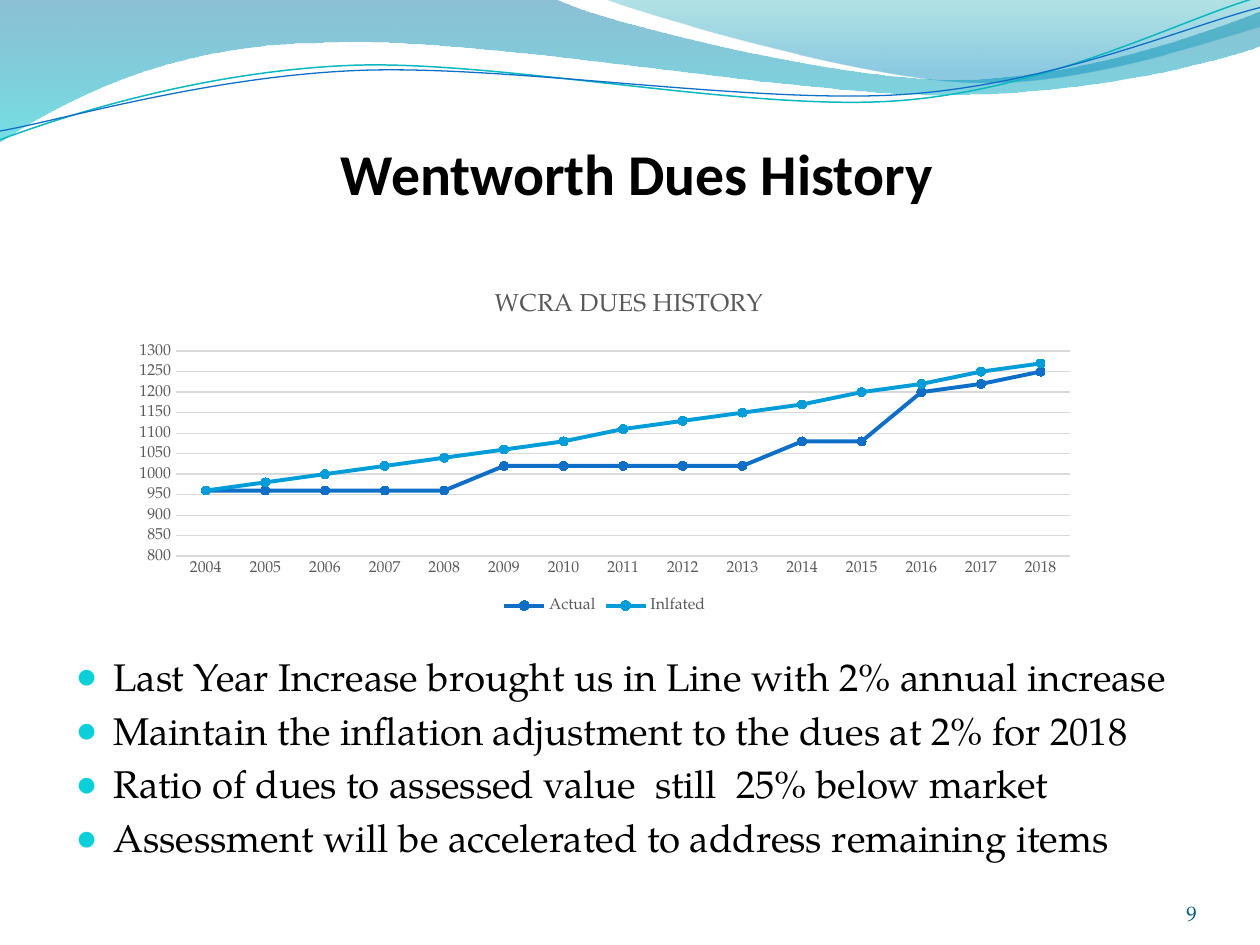
"""Build the Wentworth dues history slide with its line chart and bullets."""
import lxml.etree
import pptx
import pptx.chart.data
import pptx.dml.color
import pptx.enum.chart
import pptx.enum.text
import pptx.oxml
import pptx.oxml.ns
import pptx.util
from pptx.util import Inches, Pt

SERIF = "TeX Gyre Pagella"
GREY = "595959"
RULE = "D9D9D9"
qn = pptx.oxml.ns.qn


def rgb(code):
    return pptx.dml.color.RGBColor.from_string(code)


def add_curve(shapes, start, segments, closed):
    pts = [(Inches(seg[i]), Inches(seg[i + 1])) for seg in segments for i in range(0, len(seg), 2)]
    fb = shapes.build_freeform(Inches(start[0]), Inches(start[1]), scale=1.0)
    fb.add_line_segments(pts, close=closed)
    sp = fb.convert_to_shape()
    sp.shadow.inherit = False
    lines = iter(list(sp._element.spPr.iter(qn("a:lnTo"))))
    for seg in segments:
        first = next(lines)
        if len(seg) == 6:
            first.tag = qn("a:cubicBezTo")
            for line in (next(lines), next(lines)):
                first.append(line[0])
                line.getparent().remove(line)
    return sp


prs = pptx.Presentation()
prs.slide_width, prs.slide_height = Inches(10), Inches(7.5)
slide = prs.slides.add_slide(prs.slide_layouts[1])
shapes = slide.shapes

bands = [
    ((0, -0.01), [(4.4, -0.01), (4.76, 0.17, 6.64, 0.63, 7.58, 0.63),
                  (8.53, 0.63, 9.58, 0.26, 10, 0.09), (10.01, 0.36),
                  (9.83, 0.44, 8.7, 0.76, 7.46, 0.75), (6.22, 0.75, 3.82, 0.28, 2.57, 0.34),
                  (1.29, 0.35, 0.46, 0.83, -0.01, 1.13)],
     [(0, "0074A1", 45), (1, "00C6CF", 55)]),
    ((4.79, -0.01), [(5.09, 0.11, 6.82, 0.62, 7.69, 0.65), (8.56, 0.69, 9.61, 0.32, 10, 0.21),
                     (10, 0)],
     [(0, "00A1A9", 30), (0.8, "008BBF", 45)]),
]
for start, segments, stops in bands:
    sp = add_curve(shapes, start, segments, True)
    sp.line.fill.background()
    sp.fill.gradient()
    sp.fill.gradient_angle = 270
    for stop, (position, color, opacity) in zip(sp.fill.gradient_stops, stops):
        stop.position = position
        stop.color.rgb = rgb(color)
    for clr, (position, color, opacity) in zip(sp._element.spPr.iter(qn("a:srgbClr")), stops):
        lxml.etree.SubElement(clr, qn("a:alpha")).set("val", str(opacity * 1000))

waves = [
    ((0, 1.11), [(0.48, 0.93, 1.58, 0.57, 2.77, 0.52), (3.95, 0.47, 5.93, 0.89, 7.13, 0.8),
                 (8.33, 0.71, 9.38, 0.15, 9.98, -0.02)], "0AB8BF", 0.85),
    ((0, 1.04), [(0.47, 0.96, 1.64, 0.61, 2.83, 0.56), (4.03, 0.51, 5.97, 0.83, 7.17, 0.75),
                 (8.36, 0.67, 9.41, 0.21, 10, 0.06)], "0F6FC6", 0.75),
]
for start, segments, color, width in waves:
    sp = add_curve(shapes, start, segments, False)
    sp.fill.background()
    sp.line.color.rgb = rgb(color)
    sp.line.width = Pt(width)

title = shapes.title
title.left, title.top, title.width, title.height = map(Inches, (0.69, 0.94, 8.62, 0.95))
tf = title.text_frame
tf.auto_size = pptx.enum.text.MSO_AUTO_SIZE.NONE
tf.vertical_anchor = pptx.enum.text.MSO_ANCHOR.MIDDLE
tf.margin_left, tf.margin_right = Inches(0.18), Inches(0.07)
tf.margin_top, tf.margin_bottom = Inches(0.03), Inches(0.05)
p = tf.paragraphs[0]
p.alignment = pptx.enum.text.PP_ALIGN.CENTER
p.line_spacing = 0.9
r = p.add_run()
r.text = "Wentworth Dues History"
r.font.name, r.font.size, r.font.bold = "Calibri", Pt(33), True
r.font.color.rgb = rgb("000000")

body = slide.placeholders[1]
body.left, body.top, body.width, body.height = map(Inches, (0.5, 2.12, 9, 5.38))
tf = body.text_frame
tf.auto_size = pptx.enum.text.MSO_AUTO_SIZE.NONE
tf.margin_top = Inches(3.06)
bullets = [
    "Last Year Increase brought us in Line with 2% annual increase",
    "Maintain the inflation adjustment to the dues at 2% for 2018",
    "Ratio of dues to assessed value  still  25% below market",
    "Assessment will be accelerated to address remaining items",
]
for i, text in enumerate(bullets):
    p = tf.add_paragraph() if i else tf.paragraphs[0]
    pPr = p._p.get_or_add_pPr()
    pPr.set("marL", str(Inches(0.3)))
    pPr.set("indent", str(-Inches(0.3)))
    clr = lxml.etree.SubElement(pPr, qn("a:buClr"))
    lxml.etree.SubElement(clr, qn("a:srgbClr")).set("val", "0BD0D9")
    lxml.etree.SubElement(pPr, qn("a:buSzPct")).set("val", "95000")
    lxml.etree.SubElement(pPr, qn("a:buChar")).set("char", "●")
    p.space_before = Pt(4.4 if i else 0)
    r = p.add_run()
    r.text = text
    r.font.name, r.font.size = SERIF, Pt(22)
    r.font.color.rgb = rgb("000000")

data = pptx.chart.data.CategoryChartData()
data.categories = [str(year) for year in range(2004, 2019)]
data.add_series("Actual", [960] * 5 + [1020] * 5 + [1080] * 2 + [1200, 1220, 1250])
data.add_series("Inlfated", [960, 980, 1000, 1020, 1040, 1060, 1080, 1110, 1130, 1150,
                             1170, 1200, 1220, 1250, 1270])
chart = shapes.add_chart(pptx.enum.chart.XL_CHART_TYPE.LINE_MARKERS, Inches(0.95), Inches(2.25),
                         Inches(7.7), Inches(2.66), data).chart
chart.font.name, chart.font.size = SERIF, Pt(9)
chart.font.color.rgb = rgb(GREY)
chart.has_title = True
r = chart.chart_title.text_frame.paragraphs[0].add_run()
r.text = "WCRA DUES HISTORY"
r.font.name, r.font.size, r.font.bold = SERIF, Pt(14), False
r.font.color.rgb = rgb(GREY)
chart.has_legend = True
chart.legend.position = pptx.enum.chart.XL_LEGEND_POSITION.BOTTOM
chart.legend.include_in_layout = False

cat, val = chart.category_axis, chart.value_axis
for axis in (cat, val):
    axis.major_tick_mark = axis.minor_tick_mark = pptx.enum.chart.XL_TICK_MARK.NONE
    axis.tick_labels.font.name, axis.tick_labels.font.size = SERIF, Pt(9)
    axis.tick_labels.font.color.rgb = rgb(GREY)
cat.format.line.color.rgb = rgb(RULE)
cat.format.line.width = Pt(0.75)
val.format.line.fill.background()
val.minimum_scale, val.maximum_scale, val.major_unit = 800, 1300, 50
val.major_gridlines.format.line.color.rgb = rgb(RULE)
val.major_gridlines.format.line.width = Pt(0.75)

chart.plots[0].vary_by_categories = False
for series, color in zip(chart.plots[0].series, ("0F6FC6", "009DD9")):
    series.smooth = False
    series.format.line.color.rgb = rgb(color)
    series.format.line.width = Pt(2.25)
    series.marker.style = pptx.enum.chart.XL_MARKER_STYLE.CIRCLE
    series.marker.size = 5
    series.marker.format.fill.solid()
    series.marker.format.fill.fore_color.rgb = rgb(color)
    series.marker.format.line.color.rgb = rgb(color)

layouts = [
    (chart._chartSpace.chart.plotArea, 0, ["inner"], {"x": 5.8, "y": 20.2, "w": 92.2, "h": 61.2}),
    (chart.chart_title._element, 1, [], {"x": 38.2, "y": 0.8}),
]
for parent, index, targets, percents in layouts:
    for old in parent.findall(qn("c:layout")):
        parent.remove(old)
    layout = pptx.oxml.parse_xml(f"<c:layout {pptx.oxml.ns.nsdecls('c')}><c:manualLayout/></c:layout>")
    settings = [("layoutTarget", t) for t in targets] + [("xMode", "edge"), ("yMode", "edge")]
    settings += [(tag, percent / 100) for tag, percent in percents.items()]
    for tag, value in settings:
        lxml.etree.SubElement(layout[0], qn(f"c:{tag}")).set("val", str(value))
    parent.insert(index, layout)

number = shapes.add_textbox(Inches(8.67), Inches(6.95), Inches(0.83), Inches(0.4))
tf = number.text_frame
tf.word_wrap = True
tf.margin_left = tf.margin_right = tf.margin_top = tf.margin_bottom = 0
tf.vertical_anchor = pptx.enum.text.MSO_ANCHOR.BOTTOM
p = tf.paragraphs[0]
p.alignment = pptx.enum.text.PP_ALIGN.RIGHT
r = p.add_run()
r.text = "9"
r.font.name, r.font.size = SERIF, Pt(12)
r.font.color.rgb = rgb("045C75")

prs.save("out.pptx")
